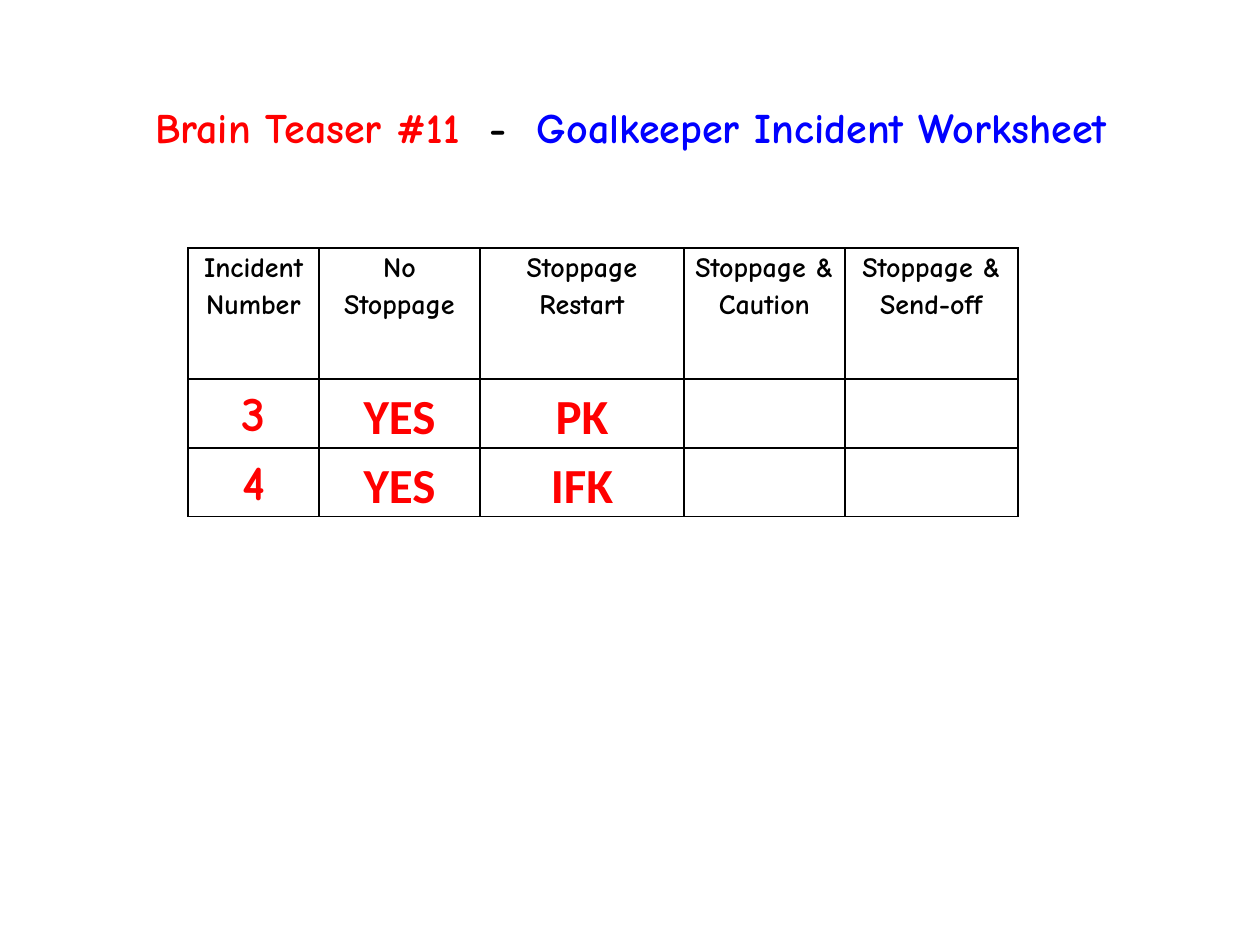
from dataclasses import dataclass

from lxml.etree import SubElement
from pptx import Presentation
from pptx.dml.color import RGBColor
from pptx.enum.text import MSO_ANCHOR, MSO_AUTO_SIZE, PP_ALIGN
from pptx.oxml.ns import qn
from pptx.slide import Slide
from pptx.util import Pt

EMU_PER_PX = 914400 // 126
BLACK = RGBColor(0, 0, 0)
RED = RGBColor(255, 0, 0)
BLUE = RGBColor(0, 0, 255)

TITLE_SPANS = [
    ("Brain Teaser #11  ", RED),
    ("-  ", BLACK),
    ("Goalkeeper Incident Worksheet", BLUE),
]
HEADINGS = [
    "Incident Number",
    "No Stoppage",
    "Stoppage Restart",
    "Stoppage & Caution",
    "Stoppage & Send-off",
]
INCIDENTS = [["3", "YES", "PK", "", ""], ["4", "YES", "IFK", "", ""]]
COLUMN_WIDTHS = [131, 161, 204, 161, 173]
ROW_HEIGHTS = [131, 66, 66]


def px(length):
    return length * EMU_PER_PX


def set_all(target, values):
    for name, value in values.items():
        setattr(target, name, value)


@dataclass
class Worksheet:
    page: Slide
    text_font: str = "Comic Neue"
    answer_font: str = "Calibri"
    border_width: int = Pt(1)

    def span(self, para, text, size, color, font):
        span = para.add_run()
        span.text = text
        set_all(span.font, {"size": Pt(size), "bold": True, "name": font})
        span.font.color.rgb = color

    def title(self, left, top, width, height, spans):
        box = self.page.shapes.add_textbox(*map(px, (left, top, width, height)))
        set_all(box.text_frame, {
            "word_wrap": False,
            "auto_size": MSO_AUTO_SIZE.SHAPE_TO_FIT_TEXT,
            "vertical_anchor": MSO_ANCHOR.MIDDLE,
        })
        para = box.text_frame.paragraphs[0]
        para.alignment = PP_ALIGN.CENTER
        for text, color in spans:
            self.span(para, text, 24, color, self.text_font)

    def borders(self, cell):
        properties = cell._tc.get_or_add_tcPr()
        for index, side in enumerate(("lnL", "lnR", "lnT", "lnB")):
            line = properties.makeelement(qn(f"a:{side}"), {"w": str(self.border_width)})
            fill = SubElement(line, qn("a:solidFill"))
            SubElement(fill, qn("a:srgbClr"), val=str(BLACK))
            properties.insert(index, line)

    def cell(self, cell, text, size, color, font):
        cell.fill.background()
        self.borders(cell)
        set_all(cell, {
            "margin_left": px(9), "margin_right": px(9),
            "margin_top": 0, "margin_bottom": 0,
        })
        if text:
            para = cell.text_frame.paragraphs[0]
            set_all(para, {
                "alignment": PP_ALIGN.CENTER,
                "line_spacing": 1.15,
                "space_after": Pt(10),
            })
            self.span(para, text, size, color, font)

    def table(self, left, top, widths, heights, headings, records):
        table = self.page.shapes.add_table(
            len(heights), len(widths),
            *map(px, (left, top, sum(widths), sum(heights))),
        ).table
        set_all(table, {"first_row": False, "horz_banding": False})
        for column, width in zip(table.columns, widths):
            column.width = px(width)
        for row, height in zip(table.rows, heights):
            row.height = px(height)
        for cell, text in zip(table.rows[0].cells, headings):
            self.cell(cell, text, 16, BLACK, self.text_font)
        for row, record in enumerate(records, start=1):
            for column, text in enumerate(record):
                font = self.answer_font if column else self.text_font
                self.cell(table.cell(row, column), text, 28, RED, font)


def main():
    deck = Presentation()
    set_all(deck, {"slide_width": px(1260), "slide_height": px(945)})
    sheet = Worksheet(deck.slides.add_slide(deck.slide_layouts[6]))
    sheet.table(188, 248, COLUMN_WIDTHS, ROW_HEIGHTS, HEADINGS, INCIDENTS)
    sheet.title(57, 95, 1148, 63, TITLE_SPANS)
    deck.save("out.pptx")


if __name__ == "__main__":
    main()
